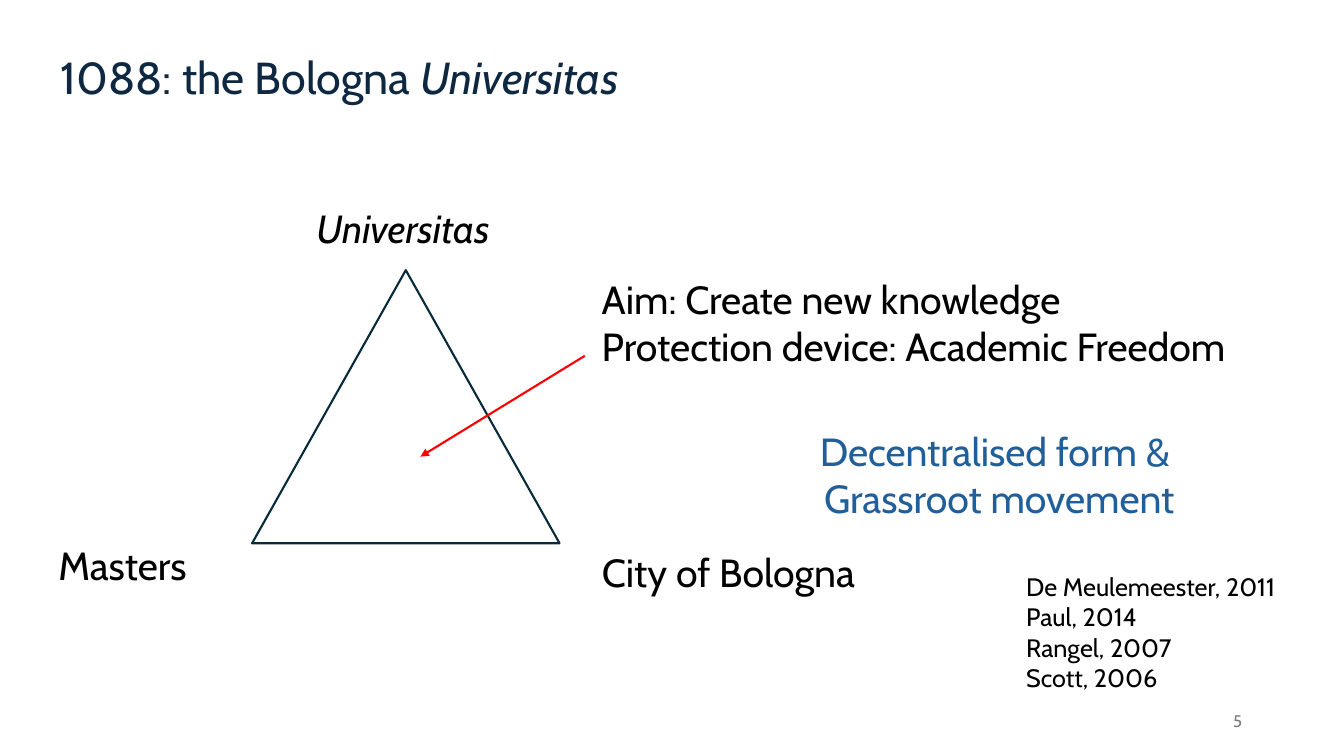
import pptx
import pptx.dml.color
import pptx.enum.shapes
import pptx.enum.text
import pptx.oxml
import pptx.oxml.ns
import pptx.util
from pptx.util import Inches

FONT = "Cabin"
BLACK, NAVY, BLUE, GREY = "000000", "0E2841", "215F9A", "797979"
OUTLINE, RED = "092A39", "FF0000"
ALIGN = pptx.enum.text.PP_ALIGN
ANCHOR = pptx.enum.text.MSO_ANCHOR


def rgb(color):
    return pptx.dml.color.RGBColor.from_string(color)


def place(box, left, top, width, height):
    box.left, box.top = Inches(left), Inches(top)
    box.width, box.height = Inches(width), Inches(height)


def write(box, paragraphs, size=28, color=BLACK, align=ALIGN.LEFT,
          anchor=ANCHOR.TOP, wrap=True):
    """Fill a box with paragraphs, each a list of (text, italic) spans."""
    frame = box.text_frame
    frame.word_wrap = wrap
    frame.auto_size = pptx.enum.text.MSO_AUTO_SIZE.NONE
    frame.vertical_anchor = anchor
    for index, spans in enumerate(paragraphs):
        para = frame.add_paragraph() if index else frame.paragraphs[0]
        para.alignment = align
        for text, italic in spans:
            span = para.add_run()
            span.text = text
            span.font.name = FONT
            span.font.size = pptx.util.Pt(size)
            span.font.italic = italic
            span.font.color.rgb = rgb(color)


def add_text(page, position, *lines, italic=False, **text_format):
    box = page.shapes.add_textbox(*map(Inches, position))
    write(box, [[(line, italic)] for line in lines], **text_format)


def add_triangle(page, position):
    triangle = page.shapes.add_shape(
        pptx.enum.shapes.MSO_SHAPE.ISOSCELES_TRIANGLE, *map(Inches, position))
    triangle.shadow.inherit = False
    triangle.fill.background()
    triangle.line.color.rgb = rgb(OUTLINE)
    triangle.line.width = pptx.util.Pt(1.5)


def add_arrow(page, start, end):
    arrow = page.shapes.add_connector(
        pptx.enum.shapes.MSO_CONNECTOR.STRAIGHT, *map(Inches, start + end))
    arrow.line.color.rgb = rgb(RED)
    arrow.line.width = pptx.util.Pt(1.5)
    head = pptx.oxml.parse_xml(
        f'<a:tailEnd {pptx.oxml.ns.nsdecls("a")} type="triangle"/>')
    arrow.line._get_or_add_ln().append(head)
    no_effects = pptx.oxml.parse_xml(
        f'<a:effectLst {pptx.oxml.ns.nsdecls("a")}/>')
    arrow._element.spPr.append(no_effects)


def main():
    deck = pptx.Presentation()
    deck.slide_width, deck.slide_height = Inches(13.33), Inches(7.5)
    page = deck.slides.add_slide(deck.slide_layouts.get_by_name("Title Only"))

    title = page.shapes.title
    place(title, 0.5, 0.44, 10.82, 0.64)
    write(title, [[("1088: the Bologna ", False), ("Universitas", True)]],
          size=32, color=NAVY)
    add_text(page, (9.42, 6.95, 3, 0.4), "5", size=12, color=GREY,
             align=ALIGN.RIGHT, anchor=ANCHOR.MIDDLE)
    add_text(page, (10.08, 5.62, 2.78, 1.31), "De Meulemeester, 2011",
             "Paul, 2014", "Rangel, 2007", "Scott, 2006", size=18, wrap=False)

    add_triangle(page, (2.5, 2.68, 3.05, 2.71))
    add_text(page, (3.04, 1.98, 2.09, 0.57), "Universitas", italic=True,
             wrap=False)
    add_text(page, (0.48, 5.32, 1.56, 0.57), "Masters", wrap=False)
    add_text(page, (5.87, 5.39, 2.75, 0.57), "City of Bologna", wrap=False)

    add_arrow(page, (5.8, 3.53), (4.17, 4.53))
    add_text(page, (5.87, 2.68, 6.64, 1.04), "Aim: Create new knowledge",
             "Protection device: Academic Freedom", wrap=False)
    add_text(page, (6.56, 4.19, 6.7, 1.04), "Decentralised form & ",
             "Grassroot movement", color=BLUE, align=ALIGN.CENTER)

    deck.save("out.pptx")


if __name__ == "__main__":
    main()
